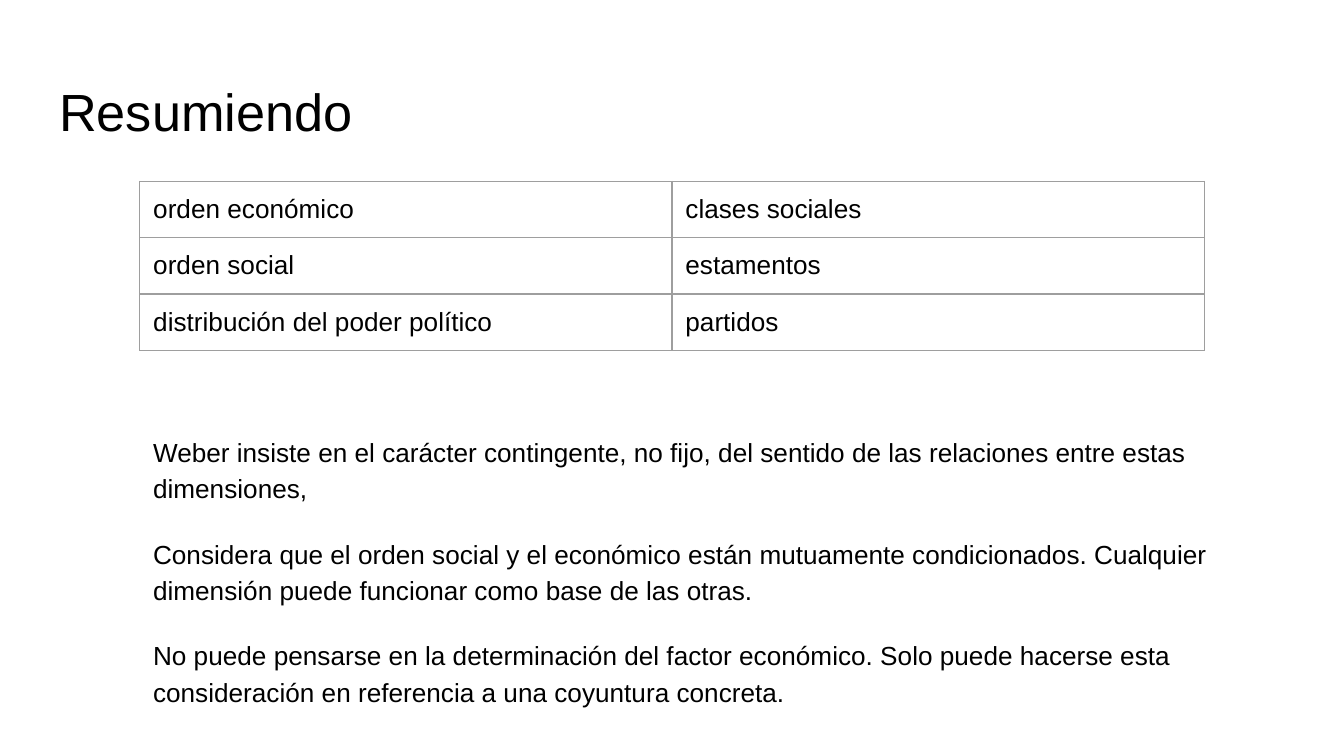
from dataclasses import dataclass

from lxml import etree
from pptx import Presentation
from pptx.dml.color import RGBColor
from pptx.enum import text as t
from pptx.oxml import ns
from pptx.util import Inches, Pt


@dataclass(frozen=True)
class Theme:
    font: str = "Arial"
    ink: str = "000000"
    background: str = "FFFFFF"
    border: str = "9E9E9E"
    border_width: float = 0.75
    title_size: int = 28
    body_size: int = 14
    margin: float = 0.1


THEME = Theme()
TITLE = "Resumiendo"
ORDERS = [
    ("orden económico", "clases sociales"),
    ("orden social", "estamentos"),
    ("distribución del poder político", "partidos"),
]
REMARKS = [
    "Weber insiste en el carácter contingente, no fijo, del sentido de las "
    "relaciones entre estas dimensiones,",
    "Considera que el orden social y el económico están mutuamente "
    "condicionados. Cualquier dimensión puede funcionar como base de las otras.",
    "No puede pensarse en la determinación del factor económico. Solo puede "
    "hacerse esta consideración en referencia a una coyuntura concreta.",
]


def write_text(frame, paragraphs, size=THEME.body_size, line_spacing=None, gap=0):
    """Fill a text frame; gap is the space in points between paragraphs."""
    frame.word_wrap = True
    for index, content in enumerate(paragraphs):
        paragraph = frame.add_paragraph() if index else frame.paragraphs[0]
        paragraph.alignment = t.PP_ALIGN.LEFT
        paragraph.space_before = Pt(gap if index else 0)
        if line_spacing:
            paragraph.line_spacing = line_spacing
        run = paragraph.add_run()
        run.text = content
        run.font.name = THEME.font
        run.font.size = Pt(size)
        run.font.color.rgb = RGBColor.from_string(THEME.ink)


def set_margins(target):
    """Give a text frame or a table cell equal margins and top anchoring."""
    target.margin_left = target.margin_right = Inches(THEME.margin)
    target.margin_top = target.margin_bottom = Inches(THEME.margin)
    target.vertical_anchor = t.MSO_ANCHOR.TOP


def set_borders(cell):
    properties = cell._tc.get_or_add_tcPr()
    for position, side in enumerate(("lnL", "lnR", "lnT", "lnB")):
        line = etree.Element(ns.qn(f"a:{side}"), w=str(Pt(THEME.border_width)))
        fill = etree.SubElement(line, ns.qn("a:solidFill"))
        etree.SubElement(fill, ns.qn("a:srgbClr"), val=THEME.border)
        properties.insert(position, line)


def place_title(slide, left, top, width, height):
    title = slide.shapes.title
    title.left, title.top = Inches(left), Inches(top)
    title.width, title.height = Inches(width), Inches(height)
    set_margins(title.text_frame)
    title.text_frame.auto_size = t.MSO_AUTO_SIZE.NONE
    write_text(title.text_frame, [TITLE], size=THEME.title_size)


def place_orders_table(slide, left, top, width, height):
    table = slide.shapes.add_table(
        len(ORDERS), len(ORDERS[0]),
        Inches(left), Inches(top), Inches(width), Inches(height),
    ).table
    table.first_row = table.horz_banding = False
    for row_index, row in enumerate(ORDERS):
        for column_index, content in enumerate(row):
            cell = table.cell(row_index, column_index)
            cell.fill.background()
            set_margins(cell)
            set_borders(cell)
            write_text(cell.text_frame, [content])


def place_remarks(slide, left, top, width, height):
    box = slide.shapes.add_textbox(
        Inches(left), Inches(top), Inches(width), Inches(height))
    set_margins(box.text_frame)
    write_text(box.text_frame, REMARKS, line_spacing=1.15, gap=16)


def main():
    presentation = Presentation()
    presentation.slide_width = Inches(10)
    presentation.slide_height = presentation.slide_width * 9 // 16
    slide = presentation.slides.add_slide(presentation.slide_layouts[5])
    slide.background.fill.solid()
    slide.background.fill.fore_color.rgb = RGBColor.from_string(THEME.background)
    place_title(slide, 0.34, 0.49, 9.32, 0.63)
    place_orders_table(slide, 1.04, 1.35, 7.92, 1.25)
    place_remarks(slide, 1.04, 3.11, 8.62, 1.89)
    presentation.save("out.pptx")


if __name__ == "__main__":
    main()
